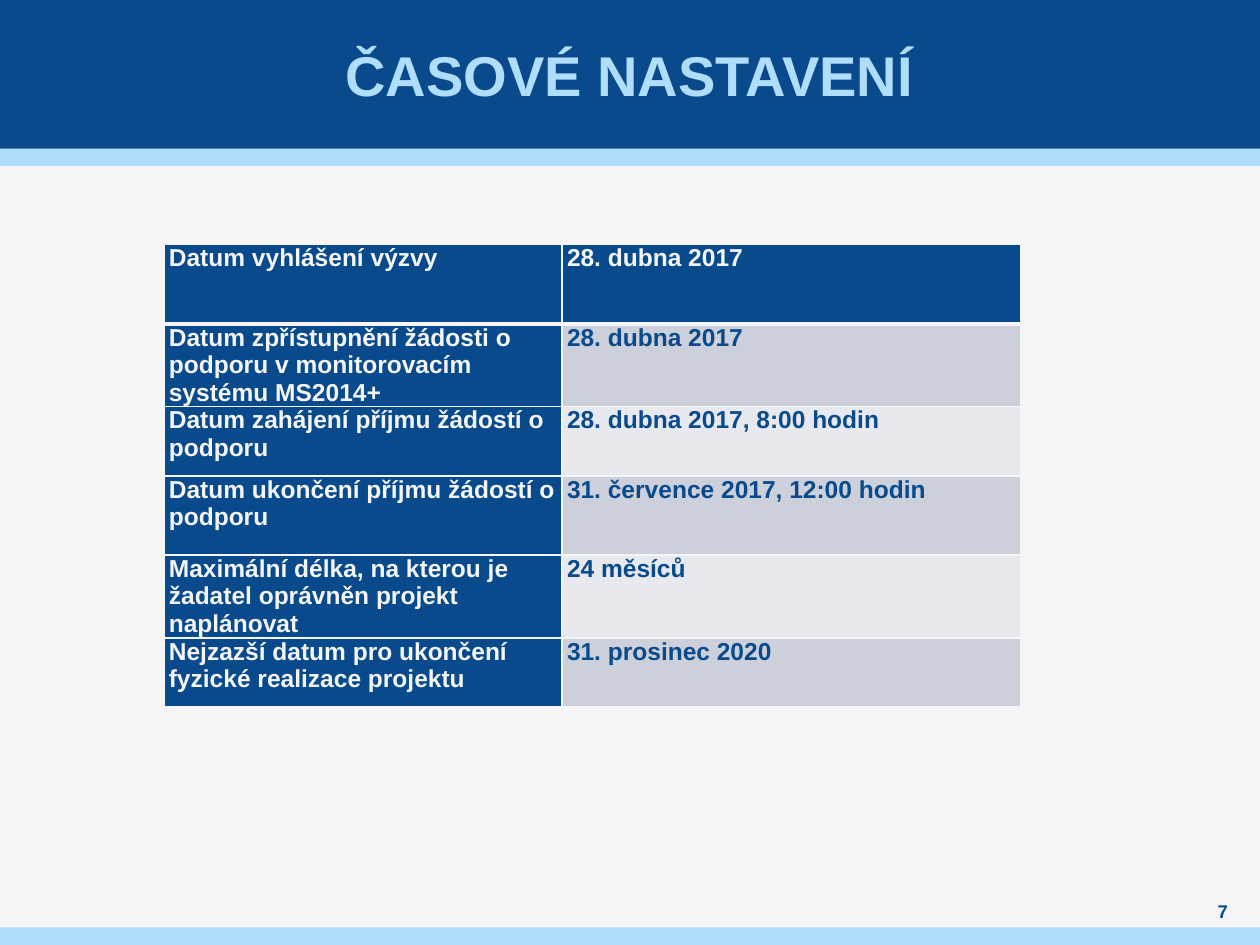
from lxml.etree import SubElement as Sub
from pptx import Presentation
from pptx.dml.color import RGBColor
from pptx.enum.shapes import MSO_SHAPE as Shape
from pptx.enum.text import MSO_ANCHOR as Anchor, MSO_AUTO_SIZE as Auto, PP_ALIGN as Align
from pptx.oxml.ns import qn
from pptx.util import Inches, Pt

NAVY = RGBColor(0x08, 0x4A, 0x8B)
SKY = RGBColor(0xAF, 0xDD, 0xFA)
PALE = RGBColor(0xF5, 0xF5, 0xF5)
DARK = RGBColor(0xCC, 0xD0, 0xDA)
LIGHT = RGBColor(0xE7, 0xE9, 0xEE)


def write(frame, text, size=14, color=NAVY, align=Align.LEFT, space=0):
    frame.word_wrap = True
    par = frame.paragraphs[0]
    par.alignment = align
    par.space_before = par.space_after = Pt(space)
    run = par.add_run()
    run.text = text
    font = run.font
    font.name, font.size, font.bold = "Arial", Pt(size), True
    font.color.rgb = color
    return par


def border(cell, side, width):
    line = Sub(cell._tc.get_or_add_tcPr(), qn(f"a:ln{side}"), w=str(Pt(width)))
    fill = Sub(line, qn("a:solidFill"))
    Sub(fill, qn("a:srgbClr"), val=str(PALE))


deck = Presentation()
deck.slide_width, deck.slide_height = Inches(10), Inches(7.5)
slide = deck.slides.add_slide(deck.slide_layouts[5])
slide.background.fill.solid()
slide.background.fill.fore_color.rgb = PALE
shapes = slide.shapes

for top, high, color in [(1.18, 0.14, SKY), (0, 1.18, NAVY), (7.36, 0.14, SKY)]:
    band = shapes.add_shape(Shape.RECTANGLE, 0, Inches(top), Inches(10), Inches(high))
    band.shadow.inherit = False
    band.fill.solid()
    band.fill.fore_color.rgb = color
    band.line.fill.background()

title = shapes.title
title.left, title.top, title.width, title.height = map(Inches, (0.39, 0, 9.21, 1.18))
shapes._spTree.append(title._element)
page = shapes.add_textbox(Inches(9.45), Inches(7.13), Inches(0.51), Inches(0.2))
for box, side in [(title, 0.04), (page, 0)]:
    frame = box.text_frame
    frame.auto_size = Auto.NONE
    frame.vertical_anchor = Anchor.MIDDLE
    frame.margin_left = frame.margin_right = Inches(side)
    frame.margin_top = frame.margin_bottom = 0
write(title.text_frame, "ČASOVÉ NASTAVENÍ", size=32, color=SKY, align=Align.CENTER)
write(page.text_frame, "7", size=10.5, align=Align.CENTER)

dates = [
    (0.63, "Datum vyhlášení výzvy", "28. dubna 2017"),
    (0.63, "Datum zpřístupnění žádosti o podporu v monitorovacím systému MS2014+",
     "28. dubna 2017"),
    (0.55, "Datum zahájení příjmu žádostí o podporu", "28. dubna 2017, 8:00 hodin"),
    (0.63, "Datum ukončení příjmu žádostí o podporu", "31. července 2017, 12:00 hodin"),
    (0.55, "Maximální délka, na kterou je žadatel oprávněn projekt naplánovat", "24 měsíců"),
    (0.55, "Nejzazší datum pro ukončení fyzické realizace projektu", "31. prosinec 2020"),
]
high = sum(date[0] for date in dates)
table = shapes.add_table(len(dates), 2, Inches(1.3), Inches(1.94),
                         Inches(6.8), Inches(high)).table
table.first_col = True
for col, width in zip(table.columns, (3.16, 3.64)):
    col.width = Inches(width)

for row, (high, *texts) in enumerate(dates):
    table.rows[row].height = Inches(high)
    for col, text in enumerate(texts):
        cell = table.cell(row, col)
        cell.margin_left = cell.margin_right = cell.margin_top = cell.margin_bottom = 0
        head = row == 0 or col == 0
        for side in "LRTB":
            thick = (row, side) in [(0, "B"), (1, "T")]
            border(cell, side, 3 if thick else 1)
        cell.fill.solid()
        cell.fill.fore_color.rgb = NAVY if head else DARK if row % 2 else LIGHT
        par = write(cell.text_frame, text, color=PALE if head else NAVY, space=3)
        par._p.get_or_add_pPr().set("marL", str(Inches(0.04)))

deck.save("out.pptx")
